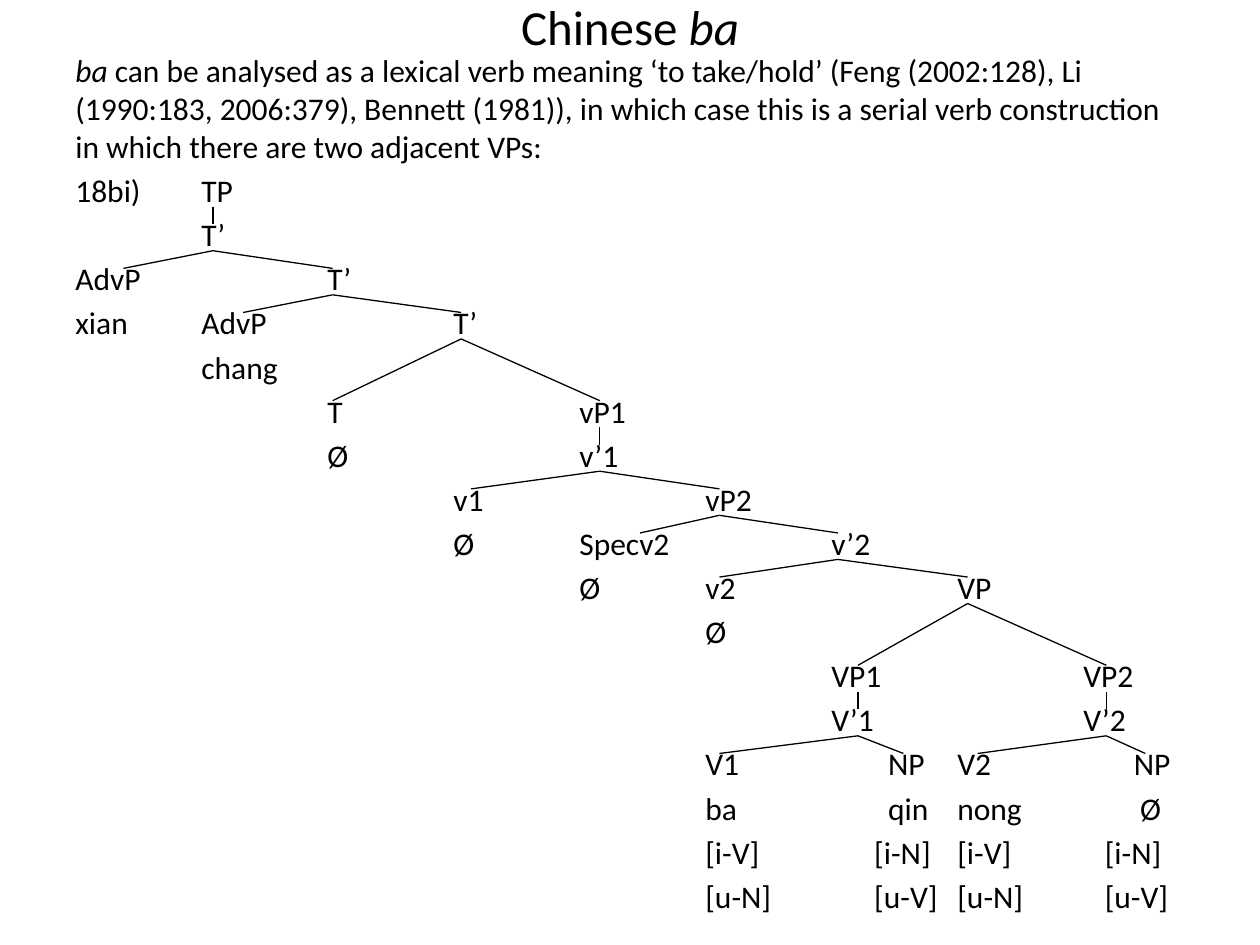
from dataclasses import dataclass

from lxml.etree import SubElement
from pptx import Presentation
from pptx.dml.color import RGBColor
from pptx.enum.shapes import MSO_CONNECTOR as Conn
from pptx.enum.text import MSO_ANCHOR as Anchor, MSO_AUTO_SIZE as AutoSize, PP_ALIGN as Align
from pptx.oxml.ns import qn
from pptx.util import Inches, Pt


@dataclass(frozen=True)
class Theme:
    """Colours, type sizes and grid steps of the slide."""
    font: str = "Calibri"
    ink: RGBColor = RGBColor(0, 0, 0)
    title_size: float = 28
    body_size: float = 18
    para_gap: float = 3.6
    line_width: float = 0.75
    column: float = 1
    row: float = 0.35
    label_top: float = 0.2
    label_bottom: float = 0.8


@dataclass(frozen=True)
class Box:
    """A region in inches."""
    left: float
    top: float
    width: float
    height: float

    def emu(self):
        """Return the four lengths in EMU."""
        return [Inches(v) for v in (self.left, self.top, self.width, self.height)]


THEME = Theme()
TITLE_BOX = Box(0.5, -0.42, 9, 1.25)
BODY_BOX = Box(0.5, 0.36, 9, 7.14)
TREE_BOX = Box(0.6, 1.36, 8.8, 6.14)

TITLE = [("Chinese ", False), ("ba", True)]
INTRO = [
    ("ba", True),
    (" can be analysed as a lexical verb meaning ‘to take/hold’ (Feng (2002:128), "
     "Li (1990:183, 2006:379), Bennett (1981)), in which case this is a serial verb "
     "construction in which there are two adjacent VPs:", False),
]

NODE_ROWS = [
    {0: "18bi)", 1: "TP"},
    {1: "T’"},
    {0: "AdvP", 2: "T’"},
    {0: "xian", 1: "AdvP", 3: "T’"},
    {1: "chang"},
    {2: "T", 4: "vP1"},
    {2: "Ø", 4: "v’1"},
    {3: "v1", 5: "vP2"},
    {3: "Ø", 4: "Specv2", 6: "v’2"},
    {4: "Ø", 5: "v2", 7: "VP"},
    {5: "Ø"},
    {6: "VP1", 8: "VP2"},
    {6: "V’1", 8: "V’2"},
    {5: "V1", 6.45: "NP", 7: "V2", 8.4: "NP"},
    {5: "ba", 6.45: "qin", 7: "nong", 8.45: "Ø"},
    {5: "[i-V]", 6.34: "[i-N]", 7: "[i-V]", 8.17: "[i-N]"},
    {5: "[u-N]", 6.34: "[u-V]", 7: "[u-N]", 8.17: "[u-V]"},
]

BRANCHES = [
    ((1.09, 0), 1, [1.09]),
    ((1.09, 1), 2, [0.38, 2.04]),
    ((2.04, 2), 3, [1.33, 3.06]),
    ((3.06, 3), 5, [2.04, 4.16]),
    ((4.16, 5), 6, [4.16]),
    ((4.16, 6), 7, [3.14, 5.11]),
    ((5.11, 7), 8, [4.48, 6.05]),
    ((6.05, 8), 9, [5.11, 7.08]),
    ((7.08, 9), 11, [6.21, 8.18]),
    ((6.21, 11), 12, [6.21]),
    ((8.18, 11), 12, [8.18]),
    ((6.21, 12), 13, [5.11, 6.57]),
    ((8.18, 12), 13, [7.16, 8.49]),
]


def add_runs(p, parts, size):
    """Add (text, italic) runs to a paragraph in the theme font."""
    for text, italic in parts:
        r = p.add_run()
        r.text = text
        r.font.name, r.font.size, r.font.italic = THEME.font, Pt(size), italic
        r.font.color.rgb = THEME.ink


def set_tabs(p, columns):
    """Give a paragraph one left tab stop per column."""
    tabs = SubElement(p._p.get_or_add_pPr(), qn("a:tabLst"))
    for col in columns:
        SubElement(tabs, qn("a:tab"), pos=str(Inches(col * THEME.column)), algn="l")


def add_title(s, box):
    """Place and format the title placeholder."""
    sp = s.shapes.title
    sp.left, sp.top, sp.width, sp.height = box.emu()
    tf = sp.text_frame
    tf.auto_size, tf.vertical_anchor = AutoSize.NONE, Anchor.MIDDLE
    p = tf.paragraphs[0]
    p.alignment = Align.CENTER
    add_runs(p, TITLE, THEME.title_size)


def add_body(s, box):
    """Write the introduction and the tree's node labels."""
    tf = s.shapes.add_textbox(*box.emu()).text_frame
    tf.word_wrap = True
    p = tf.paragraphs[0]
    p.space_before = Pt(THEME.para_gap)
    add_runs(p, INTRO, THEME.body_size)
    for nodes in NODE_ROWS:
        p = tf.add_paragraph()
        p.space_before = Pt(THEME.para_gap)
        set_tabs(p, [col for col in nodes if col])
        text = "".join("\t" * bool(col) + word for col, word in nodes.items())
        add_runs(p, [(text, False)], THEME.body_size)


def add_branches(s, box):
    """Join each node's label to the tops of the labels below it."""
    def at(col, row):
        return Inches(box.left + col * THEME.column), Inches(box.top + row * THEME.row)

    for (apex_col, apex_row), foot_row, feet in BRANCHES:
        start = at(apex_col, apex_row + THEME.label_bottom)
        for col in feet:
            end = at(col, foot_row + THEME.label_top)
            line = s.shapes.add_connector(Conn.STRAIGHT, *start, *end)
            line.line.color.rgb = THEME.ink
            line.line.width = Pt(THEME.line_width)
            SubElement(line._element.spPr, qn("a:effectLst"))


def main():
    """Build and save the slide."""
    prs = Presentation()
    prs.slide_width, prs.slide_height = Inches(10), Inches(7.5)
    s = prs.slides.add_slide(prs.slide_layouts[5])
    add_title(s, TITLE_BOX)
    add_body(s, BODY_BOX)
    add_branches(s, TREE_BOX)
    prs.save("out.pptx")


if __name__ == "__main__":
    main()
